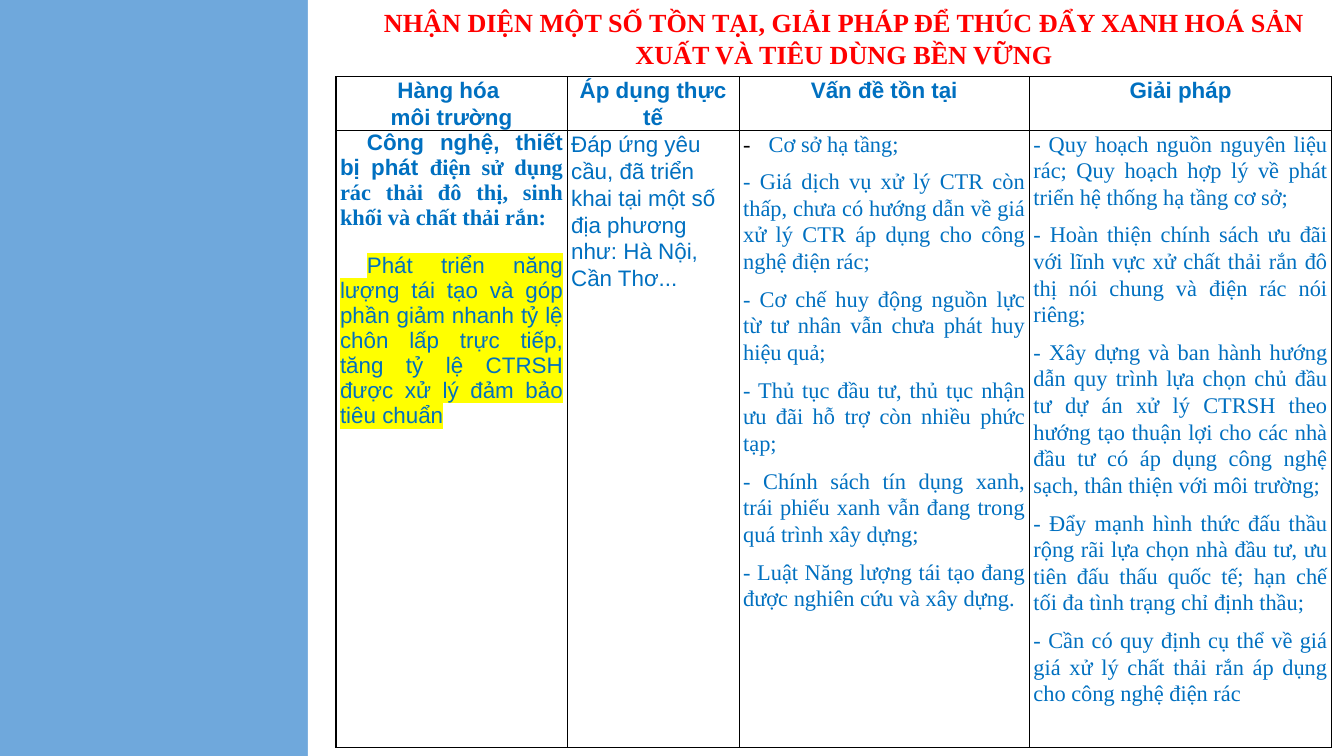
import dataclasses
import typing

import lxml.etree
import pptx
import pptx.dml.color
import pptx.enum.shapes
import pptx.enum.text
import pptx.oxml.ns
import pptx.util

BLUE = pptx.dml.color.RGBColor(0x00, 0x70, 0xC0)
SKY = pptx.dml.color.RGBColor(0x6F, 0xA8, 0xDC)
RED = pptx.dml.color.RGBColor(0xFF, 0x00, 0x00)
WHITE = pptx.dml.color.RGBColor(0xFF, 0xFF, 0xFF)
BLACK = pptx.dml.color.RGBColor(0x00, 0x00, 0x00)
YELLOW = pptx.dml.color.RGBColor(0xFF, 0xFF, 0x00)

SANS = "Arial"
SERIF = "Times New Roman"
CENTER = pptx.enum.text.PP_ALIGN.CENTER
JUSTIFY = pptx.enum.text.PP_ALIGN.JUSTIFY
LEFT = pptx.enum.text.PP_ALIGN.LEFT

GRID_COLUMNS = 1000
GRID_ROWS = 562
SLIDE_WIDTH = pptx.util.Inches(10)
SLIDE_HEIGHT = SLIDE_WIDTH * 9 // 16
COLUMN_WIDTHS = (172, 128, 216, 225)
ROW_HEIGHTS = (40, 459)


@dataclasses.dataclass(frozen=True)
class Area:
    column: int
    row: int
    columns: int
    rows: int


@dataclasses.dataclass(frozen=True)
class Span:
    text: str
    font: str = SERIF
    bold: bool = False
    size: int = 12
    color: pptx.dml.color.RGBColor = BLUE
    highlight: typing.Optional[pptx.dml.color.RGBColor] = None


@dataclasses.dataclass(frozen=True)
class Passage:
    spans: tuple[Span, ...]
    alignment: pptx.enum.text.PP_ALIGN = JUSTIFY
    line_spacing: float = 1.07
    before: int = 0
    after: int = 0
    margin: float = 0
    indent: float = 0
    bullet: str = ""


def across(columns: int) -> int:
    return round(SLIDE_WIDTH * columns / GRID_COLUMNS)


def down(rows: int) -> int:
    return round(SLIDE_HEIGHT * rows / GRID_ROWS)


def place(area: Area) -> tuple[int, int, int, int]:
    return across(area.column), down(area.row), across(area.columns), down(area.rows)


def set_attributes(target: typing.Any, values: dict[str, typing.Any]) -> None:
    for name, value in values.items():
        setattr(target, name, value)


def color_element(tag: str, color: pptx.dml.color.RGBColor) -> typing.Any:
    element = lxml.etree.Element(pptx.oxml.ns.qn(tag))
    lxml.etree.SubElement(element, pptx.oxml.ns.qn("a:srgbClr"), val=str(color))
    return element


def write_span(paragraph: typing.Any, span: Span) -> None:
    run = paragraph.add_run()
    run.text = span.text
    set_attributes(run.font, {
        "name": span.font, "size": pptx.util.Pt(span.size), "bold": span.bold,
    })
    run.font.color.rgb = span.color
    if span.highlight is not None:
        fill = run.font._element.find(pptx.oxml.ns.qn("a:solidFill"))
        fill.addnext(color_element("a:highlight", span.highlight))


def write_passages(frame: typing.Any, passages: tuple[Passage, ...]) -> None:
    for number, passage in enumerate(passages):
        paragraph = frame.add_paragraph() if number else frame.paragraphs[0]
        properties = paragraph._p.get_or_add_pPr()
        properties.set("marL", str(pptx.util.Inches(passage.margin)))
        properties.set("indent", str(pptx.util.Inches(passage.indent)))
        if passage.bullet:
            properties.append(color_element("a:buClr", BLACK))
            lxml.etree.SubElement(properties, pptx.oxml.ns.qn("a:buFont"), typeface=SERIF)
            lxml.etree.SubElement(properties, pptx.oxml.ns.qn("a:buChar"), char=passage.bullet)
        set_attributes(paragraph, {
            "alignment": passage.alignment,
            "line_spacing": passage.line_spacing,
            "space_before": pptx.util.Pt(passage.before),
            "space_after": pptx.util.Pt(passage.after),
        })
        for span in passage.spans:
            write_span(paragraph, span)


def border_cell(cell: typing.Any) -> None:
    properties = cell._tc.get_or_add_tcPr()
    for position, side in enumerate(("lnL", "lnR", "lnT", "lnB")):
        line = lxml.etree.Element(pptx.oxml.ns.qn(f"a:{side}"), w=str(pptx.util.Pt(0.75)))
        line.append(color_element("a:solidFill", BLACK))
        properties.insert(position, line)


def draw_panel(slide: typing.Any, area: Area) -> None:
    panel = slide.shapes.add_shape(pptx.enum.shapes.MSO_SHAPE.RECTANGLE, *place(area))
    panel.shadow.inherit = False
    panel.fill.solid()
    panel.fill.fore_color.rgb = WHITE
    panel.line.fill.background()


def draw_title(slide: typing.Any, area: Area, passage: Passage) -> None:
    title = slide.shapes.add_textbox(*place(area))
    title.text_frame.word_wrap = True
    write_passages(title.text_frame, (passage,))


def draw_table(slide: typing.Any, area: Area, rows: tuple[tuple[tuple[Passage, ...], ...], ...]) -> None:
    table = slide.shapes.add_table(len(ROW_HEIGHTS), len(COLUMN_WIDTHS), *place(area)).table
    set_attributes(table, {"first_row": False, "horz_banding": False})
    for column, width in zip(table.columns, COLUMN_WIDTHS):
        column.width = across(width)
    for row, height, contents in zip(table.rows, ROW_HEIGHTS, rows):
        row.height = down(height)
        for cell, passages in zip(row.cells, contents):
            set_attributes(cell, {
                "margin_left": across(3), "margin_right": across(3),
                "margin_top": 0, "margin_bottom": 0,
            })
            cell.fill.background()
            border_cell(cell)
            write_passages(cell.text_frame, passages)


def header(*lines: str) -> tuple[Passage, ...]:
    return tuple(Passage((Span(line, SANS, True),), CENTER) for line in lines)


def points(*texts: str) -> tuple[Passage, ...]:
    return tuple(Passage((Span(text),), after=6) for text in texts)


TITLE = Passage((Span(
    "NHẬN DIỆN MỘT SỐ TỒN TẠI, GIẢI PHÁP ĐỂ THÚC ĐẨY XANH HOÁ SẢN XUẤT VÀ TIÊU DÙNG BỀN VỮNG",
    bold=True, size=14, color=RED),), CENTER, 1)
HEADERS = (header("Hàng hóa ", "môi trường"), header("Áp dụng thực tế"),
           header("Vấn đề tồn tại"), header("Giải pháp"))
GOODS = (
    Passage((Span("Công nghệ, thiết bị phát ", SANS, True),
             Span("điện sử dụng rác thải đô thị, sinh khối và chất thải rắn: ", bold=True)),
            line_spacing=1, after=6, indent=0.2),
    Passage((Span("Phát triển năng lượng tái tạo và góp phần giảm nhanh tỷ lệ chôn lấp trực tiếp, "
                  "tăng tỷ lệ CTRSH được xử lý đảm bảo tiêu chuẩn", SANS, highlight=YELLOW),),
            line_spacing=1, before=6, after=6, indent=0.2),
)
PRACTICE = (Passage((Span("Đáp ứng yêu cầu, đã triển khai tại một số địa phương như: "
                          "Hà Nội, Cần Thơ...", SANS),), LEFT),)
PROBLEMS = (Passage((Span("Cơ sở hạ tầng; "),), after=6, margin=0.19, indent=-0.19, bullet="-"),) + points(
    "- Giá dịch vụ xử lý CTR còn thấp, chưa có hướng dẫn về giá xử lý CTR áp dụng cho công nghệ điện rác;",
    "- Cơ chế huy động nguồn lực từ tư nhân vẫn chưa phát huy hiệu quả; ",
    "- Thủ tục đầu tư, thủ tục nhận ưu đãi hỗ trợ còn nhiều phức tạp; ",
    "- Chính sách tín dụng xanh, trái phiếu xanh vẫn đang trong quá trình xây dựng; ",
    "- Luật Năng lượng tái tạo đang được nghiên cứu và xây dựng.",
)
SOLUTIONS = points(
    "- Quy hoạch nguồn nguyên liệu rác; Quy hoạch hợp lý về phát triển hệ thống hạ tầng cơ sở;",
    "- Hoàn thiện chính sách ưu đãi với lĩnh vực xử chất thải rắn đô thị nói chung và điện rác nói riêng; ",
    "- Xây dựng và ban hành hướng dẫn quy trình lựa chọn chủ đầu tư dự án xử lý CTRSH theo hướng tạo "
    "thuận lợi cho các nhà đầu tư có áp dụng công nghệ sạch, thân thiện với môi trường; ",
    "- Đẩy mạnh hình thức đấu thầu rộng rãi lựa chọn nhà đầu tư, ưu tiên đấu thấu quốc tế; "
    "hạn chế tối đa tình trạng chỉ định thầu; ",
    "- Cần có quy định cụ thể về giá giá xử lý chất thải rắn áp dụng cho công nghệ điện rác",
)


def main() -> None:
    presentation = pptx.Presentation()
    set_attributes(presentation, {"slide_width": SLIDE_WIDTH, "slide_height": SLIDE_HEIGHT})
    slide = presentation.slides.add_slide(presentation.slide_layouts[6])
    slide.background.fill.solid()
    slide.background.fill.fore_color.rgb = SKY
    draw_panel(slide, Area(229, 0, 771, GRID_ROWS))
    draw_table(slide, Area(250, 57, sum(COLUMN_WIDTHS), sum(ROW_HEIGHTS)),
               (HEADERS, (GOODS, PRACTICE, PROBLEMS, SOLUTIONS)))
    draw_title(slide, Area(257, 0, 742, 57), TITLE)
    presentation.save("out.pptx")


if __name__ == "__main__":
    main()
